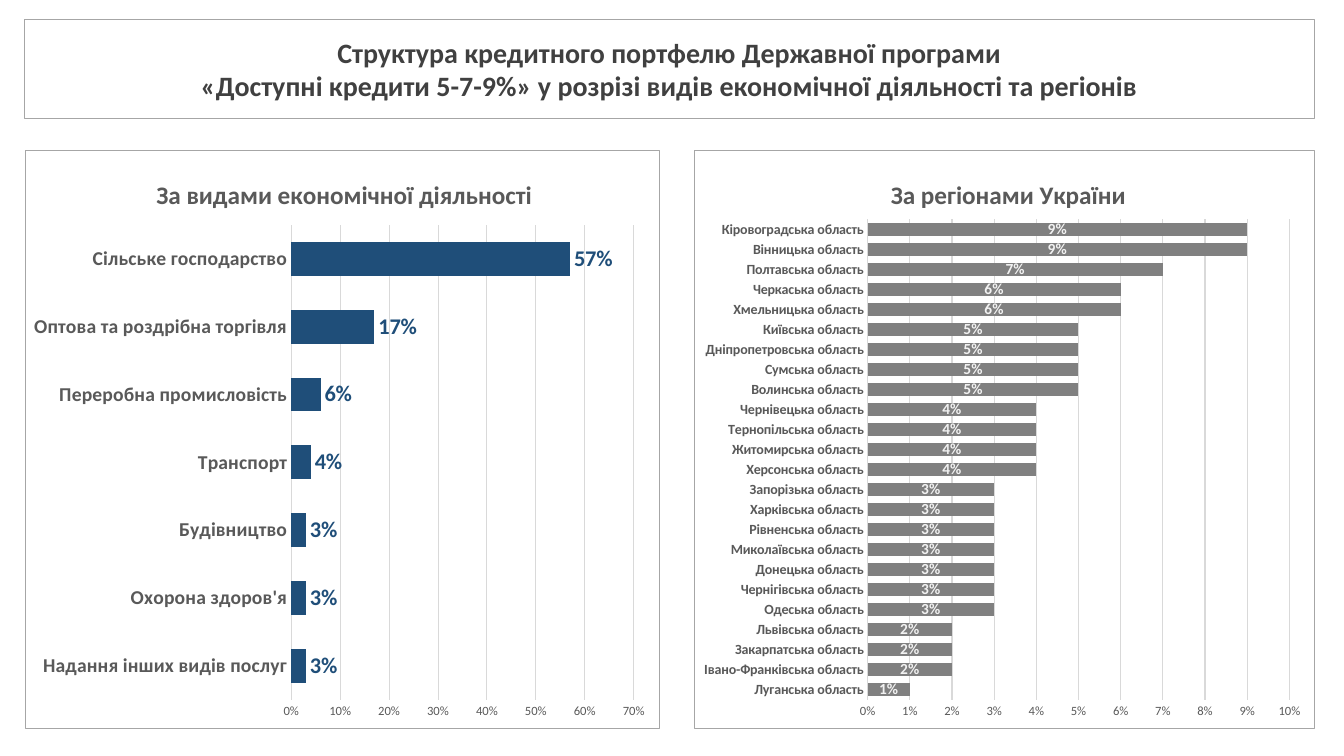
from dataclasses import dataclass

from lxml.etree import SubElement
from pptx import Presentation
from pptx.chart.data import CategoryChartData
from pptx.dml.color import RGBColor
from pptx.enum.chart import XL_CHART_TYPE, XL_LABEL_POSITION, XL_TICK_MARK
from pptx.enum.text import MSO_ANCHOR, MSO_AUTO_SIZE, PP_ALIGN
from pptx.oxml import parse_xml
from pptx.oxml.ns import nsdecls, qn
from pptx.util import Cm, Pt


@dataclass(frozen=True)
class Theme:
    font: str = "Calibri"
    heading: str = "404040"
    text: str = "595959"
    border: str = "A6A6A6"
    grid: str = "D9D9D9"
    activity: str = "1F4E79"
    region: str = "808080"
    region_label: str = "F2F2F2"
    heading_size: int = 20
    chart_title_size: int = 18
    value_axis_size: int = 9
    border_width: float = 0.5
    grid_width: float = 0.75


THEME = Theme()

HEADING = [
    "Структура кредитного портфелю Державної програми",
    "«Доступні кредити 5-7-9%» у розрізі видів економічної діяльності та регіонів",
]

ACTIVITIES = {
    "Надання інших видів послуг": 0.03,
    "Охорона здоров'я": 0.03,
    "Будівництво": 0.03,
    "Транспорт": 0.04,
    "Переробна промисловість": 0.06,
    "Оптова та роздрібна торгівля": 0.17,
    "Сільське господарство": 0.57,
}

REGIONS = {
    "Луганська": 0.01,
    "Івано-Франківська": 0.02,
    "Закарпатська": 0.02,
    "Львівська": 0.02,
    "Одеська": 0.03,
    "Чернігівська": 0.03,
    "Донецька": 0.03,
    "Миколаївська": 0.03,
    "Рівненська": 0.03,
    "Харківська": 0.03,
    "Запорізька": 0.03,
    "Херсонська": 0.04,
    "Житомирська": 0.04,
    "Тернопільська": 0.04,
    "Чернівецька": 0.04,
    "Волинська": 0.05,
    "Сумська": 0.05,
    "Дніпропетровська": 0.05,
    "Київська": 0.05,
    "Хмельницька": 0.06,
    "Черкаська": 0.06,
    "Полтавська": 0.07,
    "Вінницька": 0.09,
    "Кіровоградська": 0.09,
}


def set_attributes(target, values):
    for name, value in values.items():
        setattr(target, name, value)


def style_font(font, size, color, bold=False):
    set_attributes(font, {"name": THEME.font, "size": Pt(size), "bold": bold})
    font.color.rgb = RGBColor.from_string(color)


def style_line(line, color, width):
    line.color.rgb = RGBColor.from_string(color)
    line.width = Pt(width)


def add_heading(slide, left, top, width, height):
    box = slide.shapes.title
    set_attributes(box, {"left": left, "top": top, "width": width, "height": height})
    style_line(box.line, THEME.border, THEME.border_width)
    frame = box.text_frame
    set_attributes(frame, {
        "word_wrap": True,
        "auto_size": MSO_AUTO_SIZE.NONE,
        "vertical_anchor": MSO_ANCHOR.MIDDLE,
    })
    frame.text = "\n".join(HEADING)
    for para in frame.paragraphs:
        set_attributes(para, {"alignment": PP_ALIGN.CENTER, "space_before": Pt(0)})
        for span in para.runs:
            style_font(span.font, THEME.heading_size, THEME.heading, True)


def place_part(part, index, values):
    layout = part.find(qn("c:layout"))
    if layout is None:
        layout = parse_xml(f"<c:layout {nsdecls('c')}/>")
        part.insert(index, layout)
    manual = SubElement(layout, qn("c:manualLayout"))
    for name, value in values.items():
        SubElement(manual, qn(f"c:{name}")).set("val", str(value))


def add_border(chart):
    border = parse_xml(
        f"<c:spPr {nsdecls('c', 'a')}><a:noFill/>"
        f'<a:ln w="{Pt(THEME.border_width)}"><a:solidFill>'
        f'<a:srgbClr val="{THEME.border}"/></a:solidFill></a:ln></c:spPr>'
    )
    chart.element.find(qn("c:chart")).addnext(border)


def style_axes(chart, category_size, maximum, step):
    for axis in (chart.category_axis, chart.value_axis):
        set_attributes(axis, {
            "major_tick_mark": XL_TICK_MARK.NONE,
            "minor_tick_mark": XL_TICK_MARK.NONE,
        })
    category, value = chart.category_axis, chart.value_axis
    style_font(category.tick_labels.font, category_size, THEME.text, True)
    style_line(category.format.line, THEME.grid, THEME.grid_width)
    set_attributes(value, {
        "minimum_scale": 0,
        "maximum_scale": maximum,
        "major_unit": step,
        "has_major_gridlines": True,
    })
    set_attributes(value.tick_labels, {"number_format": "0%", "number_format_is_linked": False})
    style_font(value.tick_labels.font, THEME.value_axis_size, THEME.text)
    value.format.line.fill.background()
    style_line(value.major_gridlines.format.line, THEME.grid, THEME.grid_width)


def style_bars(plot, bar_color, label_color, label_size, position, spacing):
    set_attributes(plot, {"vary_by_categories": False, "has_data_labels": True, **spacing})
    series = plot.series[0]
    series.invert_if_negative = False
    series.format.fill.solid()
    series.format.fill.fore_color.rgb = RGBColor.from_string(bar_color)
    set_attributes(plot.data_labels, {
        "show_value": True,
        "number_format": "0%",
        "number_format_is_linked": False,
        "position": position,
    })
    style_font(plot.data_labels.font, label_size, label_color, True)


def add_bar_chart(slide, kind, frame, title, shares, title_place, plot_place):
    data = CategoryChartData(number_format="0%")
    data.categories = list(shares)
    data.add_series("Частка", list(shares.values()))
    chart = slide.shapes.add_chart(kind, *frame, data).chart
    style_font(chart.font, 10, THEME.text)
    set_attributes(chart, {"has_legend": False, "has_title": True})
    chart.chart_title.text_frame.text = title
    span = chart.chart_title.text_frame.paragraphs[0].runs[0]
    style_font(span.font, THEME.chart_title_size, THEME.text, True)
    edges = {"xMode": "edge", "yMode": "edge"}
    place_part(chart.chart_title.element, 1, {**edges, **title_place})
    plot_area = chart.element.find(qn("c:chart")).find(qn("c:plotArea"))
    place_part(plot_area, 0, {"layoutTarget": "inner", **edges, **plot_place})
    add_border(chart)
    return chart


def main():
    deck = Presentation()
    set_attributes(deck, {"slide_width": Cm(33.87), "slide_height": Cm(19.05)})
    slide = deck.slides.add_slide(deck.slide_layouts[5])
    add_heading(slide, Cm(0.61), Cm(0.48), Cm(32.51), Cm(2.5))

    activities = add_bar_chart(
        slide, XL_CHART_TYPE.BAR_CLUSTERED, (Cm(0.62), Cm(3.77), Cm(16.0), Cm(14.6)),
        "За видами економічної діяльності", ACTIVITIES,
        {"x": 0.2, "y": 0.04}, {"x": 0.42, "y": 0.13, "w": 0.54, "h": 0.82})
    style_axes(activities, 14, 0.7, 0.1)
    style_bars(activities.plots[0], THEME.activity, THEME.activity, 16,
               XL_LABEL_POSITION.OUTSIDE_END, {"gap_width": 100})

    regions = add_bar_chart(
        slide, XL_CHART_TYPE.BAR_STACKED, (Cm(17.48), Cm(3.77), Cm(15.65), Cm(14.6)),
        "За регіонами України", {f"{name} область": share for name, share in REGIONS.items()},
        {"x": 0.31, "y": 0.04}, {"x": 0.28, "y": 0.12, "w": 0.68, "h": 0.83})
    style_axes(regions, 10, 0.1, 0.01)
    style_bars(regions.plots[0], THEME.region, THEME.region_label, 11,
               XL_LABEL_POSITION.CENTER, {"gap_width": 60, "overlap": 100})

    deck.save("out.pptx")


if __name__ == "__main__":
    main()
